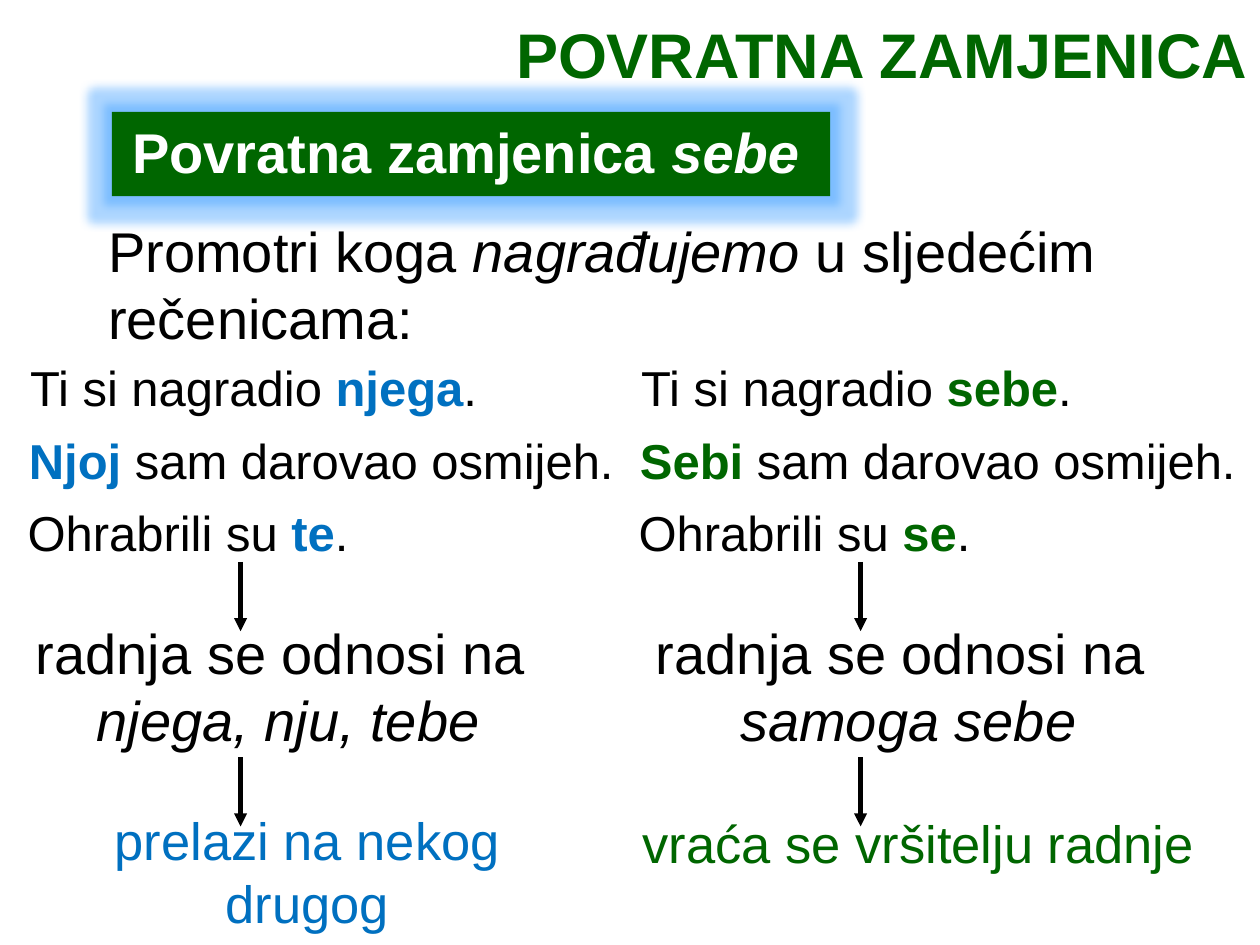
"""Build a slide on the Croatian reflexive pronoun."""
from typing import NamedTuple

from lxml.etree import SubElement
from pptx import Presentation
from pptx.dml.color import RGBColor
from pptx.enum.shapes import MSO_CONNECTOR, MSO_SHAPE
from pptx.enum.text import MSO_ANCHOR, MSO_AUTO_SIZE, PP_ALIGN
from pptx.oxml.ns import qn
from pptx.util import Pt

BLACK = RGBColor(0x00, 0x00, 0x00)
WHITE = RGBColor(0xFF, 0xFF, 0xFF)
GREEN = RGBColor(0x00, 0x66, 0x00)
BLUE = RGBColor(0x00, 0x70, 0xC0)
GLOW = RGBColor(0x33, 0x99, 0xFF)


class Bit(NamedTuple):
    """A run of text."""
    text: str
    color: RGBColor = BLACK
    bold: bool = False
    slant: bool = False


class Label(NamedTuple):
    """A text box whose lines are lists of runs."""
    left: float
    top: float
    width: float
    height: float
    size: float
    lines: list[list[Bit]]
    align: PP_ALIGN = PP_ALIGN.LEFT
    wrap: bool = False
    anchor: MSO_ANCHOR = MSO_ANCHOR.TOP
    inset: tuple[float, float] = (7.2, 3.6)
    space: float = 0
    pitch: float = 1
    grow: bool = True


class Side(NamedTuple):
    """One half of the comparison."""
    left: float
    shift: float
    tint: RGBColor
    words: tuple[str, str, str]
    widths: tuple[float, float, float]
    who: str
    close: str
    base: float
    height: float


class Arrow(NamedTuple):
    """A downward arrow."""
    left: float
    top: float
    length: float = 39.6


SIDES = [
    Side(10.1, 2.1, BLUE, ("njega", "Njoj", "te"), (270, 350, 202),
         "njega, nju, tebe", "prelazi na nekog drugog", 457.9, 79.9),
    Side(359.3, 7.2, GREEN, ("sebe", "Sebi", "se"), (264, 358, 208),
         "samoga sebe", "vraća se vršitelju radnje", 460.1, 43.2),
]


def draw_label(slide, label: Label) -> None:
    """Draw a text box run by run."""
    box = slide.shapes.add_textbox(
        Pt(label.left), Pt(label.top), Pt(label.width), Pt(label.height))
    frame = box.text_frame
    frame.word_wrap = label.wrap
    frame.auto_size = (MSO_AUTO_SIZE.SHAPE_TO_FIT_TEXT if label.grow
                       else MSO_AUTO_SIZE.NONE)
    frame.vertical_anchor = label.anchor
    frame.margin_left = frame.margin_right = Pt(label.inset[0])
    frame.margin_top = frame.margin_bottom = Pt(label.inset[1])
    for index, line in enumerate(label.lines):
        para = frame.add_paragraph() if index else frame.paragraphs[0]
        para.alignment = label.align
        para.space_before = Pt(label.space)
        para.line_spacing = label.pitch
        for bit in line:
            run = para.add_run()
            run.text = bit.text
            font = run.font
            font.name = "Arial"
            font.size = Pt(label.size)
            font.bold = bit.bold
            font.italic = bit.slant
            font.color.rgb = bit.color


def draw_arrow(slide, arrow: Arrow) -> None:
    """Draw a black arrow with a triangle head."""
    line = slide.shapes.add_connector(
        MSO_CONNECTOR.STRAIGHT, Pt(arrow.left), Pt(arrow.top),
        Pt(arrow.left), Pt(arrow.top + arrow.length))
    line.line.color.rgb = BLACK
    line.line.width = Pt(2.5)
    props = line._element.spPr
    SubElement(props.find(qn("a:ln")), qn("a:tailEnd"), type="triangle")
    SubElement(props, qn("a:effectLst"))


def draw_banner(slide) -> None:
    """Draw the green banner with its blue glow."""
    rect = slide.shapes.add_shape(
        MSO_SHAPE.RECTANGLE, Pt(64), Pt(64), Pt(410.4), Pt(48.2))
    rect.fill.solid()
    rect.fill.fore_color.rgb = GREEN
    rect.line.fill.background()
    rect.shadow.inherit = False
    effects = rect._element.spPr.find(qn("a:effectLst"))
    glow = SubElement(effects, qn("a:glow"), rad=str(Pt(10)))
    color = SubElement(glow, qn("a:srgbClr"), val=str(GLOW))
    SubElement(color, qn("a:alpha"), val="40000")


def draw_side(slide, side: Side) -> None:
    """Draw the sentences, meaning and conclusion of one side."""
    him, her, you = (Bit(word, side.tint, True) for word in side.words)
    rows = [
        [Bit("Ti si nagradio "), him, Bit(".")],
        [her, Bit(" sam darovao osmijeh.")],
        [Bit("Ohrabrili su "), you, Bit(".")],
    ]
    for index, (row, width) in enumerate(zip(rows, side.widths)):
        draw_label(slide, Label(side.left - 0.7 * index, 200.9 + 41.4 * index,
                                width, 41, 28, [row]))
    pair = [[Bit("radnja se odnosi na ")], [Bit(side.who, slant=True)]]
    draw_label(slide, Label(side.left + side.shift, 350, 305.3, 85, 32,
                            pair, PP_ALIGN.CENTER))
    draw_label(slide, Label(side.left - 1.5, side.base, 334.1, side.height, 30,
                            [[Bit(side.close, side.tint)]],
                            PP_ALIGN.CENTER, True))


def main() -> None:
    """Build and save the slide."""
    deck = Presentation()
    deck.slide_width, deck.slide_height = Pt(720), Pt(540)
    slide = deck.slides.add_slide(deck.slide_layouts[6])
    draw_banner(slide)
    labels = [
        Label(70.6, 48.2, 395.3, 60.5, 32,
              [[Bit("Povratna zamjenica ", WHITE, True),
                Bit("sebe", WHITE, True, True)]],
              wrap=True, anchor=MSO_ANCHOR.BOTTOM, inset=(5, 2.9),
              space=10, grow=False),
        Label(160.6, 1.4, 559.4, 54.7, 36,
              [[Bit("POVRATNA ZAMJENICA", GREEN, True)]], PP_ALIGN.RIGHT,
              True, MSO_ANCHOR.BOTTOM, pitch=0.9, grow=False),
        Label(54.7, 120.2, 591.8, 85, 32,
              [[Bit("Promotri koga "), Bit("nagrađujemo", slant=True),
                Bit(" u sljedećim")], [Bit("rečenicama:")]]),
    ]
    for label in labels:
        draw_label(slide, label)
    for side in SIDES:
        draw_side(slide, side)
    for left in (137.5, 491.8):
        for top in (321.1, 432.7):
            draw_arrow(slide, Arrow(left, top))
    deck.save("out.pptx")


if __name__ == "__main__":
    main()
